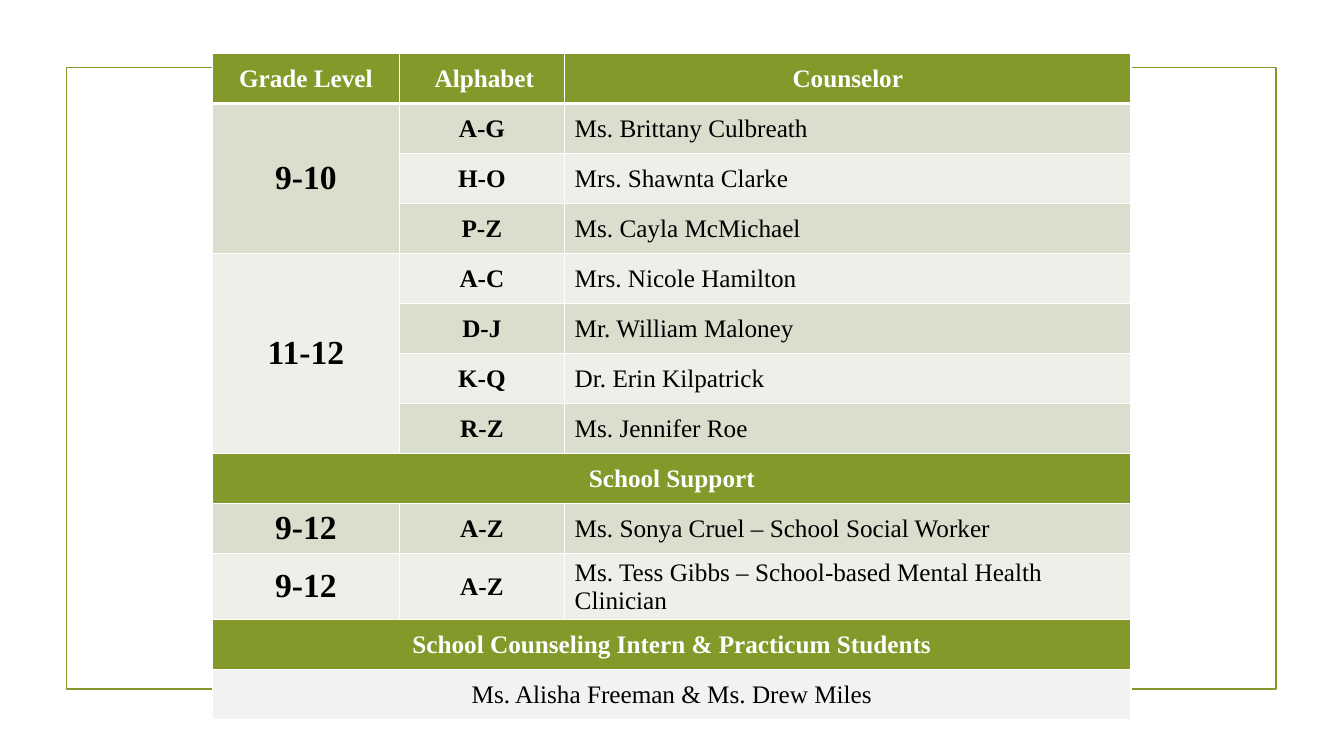
from lxml import etree
from pptx import Presentation
from pptx.dml.color import RGBColor
from pptx.enum.shapes import MSO_SHAPE
from pptx.enum.text import MSO_ANCHOR, PP_ALIGN
from pptx.oxml.ns import qn
from pptx.util import Cm, Pt

RECTANGLE = MSO_SHAPE.RECTANGLE
MIDDLE = MSO_ANCHOR.MIDDLE
CENTER, LEFT = PP_ALIGN.CENTER, PP_ALIGN.LEFT

FONT = "Times New Roman"
GREEN, WHITE, BLACK = "83992A", "FFFFFF", "000000"
BANDS = ("D9DECD", "EDEFE8")
PALE_GRAY = "F2F2F2"

COLUMN_WIDTHS = (4.7, 4.17, 14.27)
ROW_HEIGHT = 1.26
HEADINGS = ("Grade Level", " Alphabet", "Counselor")
COUNSELORS = (
    ("9-10", (
        ("A-G", "Ms. Brittany Culbreath"),
        ("H-O", "Mrs. Shawnta Clarke"),
        ("P-Z", "Ms. Cayla McMichael"),
    )),
    ("11-12", (
        ("A-C", "Mrs. Nicole Hamilton"),
        ("D-J", "Mr. William Maloney"),
        ("K-Q", "Dr. Erin Kilpatrick"),
        ("R-Z", "Ms. Jennifer Roe"),
    )),
)
SUPPORT = (
    ("9-12", (("A-Z", "Ms. Sonya Cruel – School Social Worker"),)),
    ("9-12", (("A-Z", "Ms. Tess Gibbs – School-based Mental Health Clinician"),)),
)
INTERNS = "Ms. Alisha Freeman & Ms. Drew Miles"
ROW_COUNT = 4 + sum(len(staff) for _, staff in COUNSELORS + SUPPORT)


def rgb(hex_color):
    return RGBColor.from_string(hex_color)


def add_frame(slide):
    frame = slide.shapes.add_shape(RECTANGLE, Cm(1.68), Cm(1.7), Cm(30.48), Cm(15.67))
    frame.shadow.inherit = False
    frame.fill.background()
    frame.line.color.rgb = rgb(GREEN)
    frame.line.width = Pt(1.25)


def set_borders(cell, bottom):
    properties = cell._tc.get_or_add_tcPr()
    for side, width in (("L", 1), ("R", 1), ("T", 1), ("B", bottom)):
        border = etree.SubElement(properties, qn(f"a:ln{side}"), w=str(Pt(width)))
        fill = etree.SubElement(border, qn("a:solidFill"))
        etree.SubElement(fill, qn("a:srgbClr"), val=WHITE)


def style_cell(cell, fill, bottom=1):
    set_borders(cell, bottom)
    cell.fill.solid()
    cell.fill.fore_color.rgb = rgb(fill)
    cell.vertical_anchor = MIDDLE


def write(cell, text, color=BLACK, size=18, bold=True, align=CENTER):
    cell.text_frame.text = text
    paragraph = cell.text_frame.paragraphs[0]
    paragraph.alignment = align
    font = paragraph.runs[0].font
    font.name = FONT
    font.size = Pt(size)
    font.bold = bold
    font.color.rgb = rgb(color)


def fill_headings(table):
    for column, heading in enumerate(HEADINGS):
        cell = table.cell(0, column)
        style_cell(cell, GREEN, bottom=3)
        write(cell, heading, WHITE)


def fill_grades(table, row, grades):
    band = 0
    for grade, staff in grades:
        grade_cell = table.cell(row, 0)
        grade_fill = BANDS[band % 2]
        if len(staff) > 1:
            grade_cell.merge(table.cell(row + len(staff) - 1, 0))
        write(grade_cell, grade, size=24)
        for letters, person in staff:
            style_cell(table.cell(row, 0), grade_fill)
            for column in (1, 2):
                style_cell(table.cell(row, column), BANDS[band % 2])
            write(table.cell(row, 1), letters)
            write(table.cell(row, 2), person, bold=False, align=LEFT)
            row += 1
            band += 1
    return row


def fill_full_row(table, row, text, fill=GREEN, color=WHITE, bold=True):
    table.cell(row, 0).merge(table.cell(row, 2))
    for column in range(3):
        style_cell(table.cell(row, column), fill)
    write(table.cell(row, 0), text, color, bold=bold)
    return row + 1


def add_directory(slide):
    table = slide.shapes.add_table(
        ROW_COUNT, len(COLUMN_WIDTHS), Cm(5.36), Cm(1.35),
        Cm(sum(COLUMN_WIDTHS)), Cm(ROW_HEIGHT * ROW_COUNT),
    ).table
    for column, width in zip(table.columns, COLUMN_WIDTHS):
        column.width = Cm(width)
    for row in table.rows:
        row.height = Cm(ROW_HEIGHT)
    fill_headings(table)
    position = fill_grades(table, 1, COUNSELORS)
    position = fill_full_row(table, position, "School Support")
    position = fill_grades(table, position, SUPPORT)
    position = fill_full_row(
        table, position, "School Counseling Intern & Practicum Students")
    fill_full_row(table, position, INTERNS, PALE_GRAY, BLACK, bold=False)


def main():
    presentation = Presentation()
    presentation.slide_width = Cm(33.87)
    presentation.slide_height = Cm(19.05)
    slide = presentation.slides.add_slide(presentation.slide_layouts[6])
    add_frame(slide)
    add_directory(slide)
    presentation.save("out.pptx")


if __name__ == "__main__":
    main()
